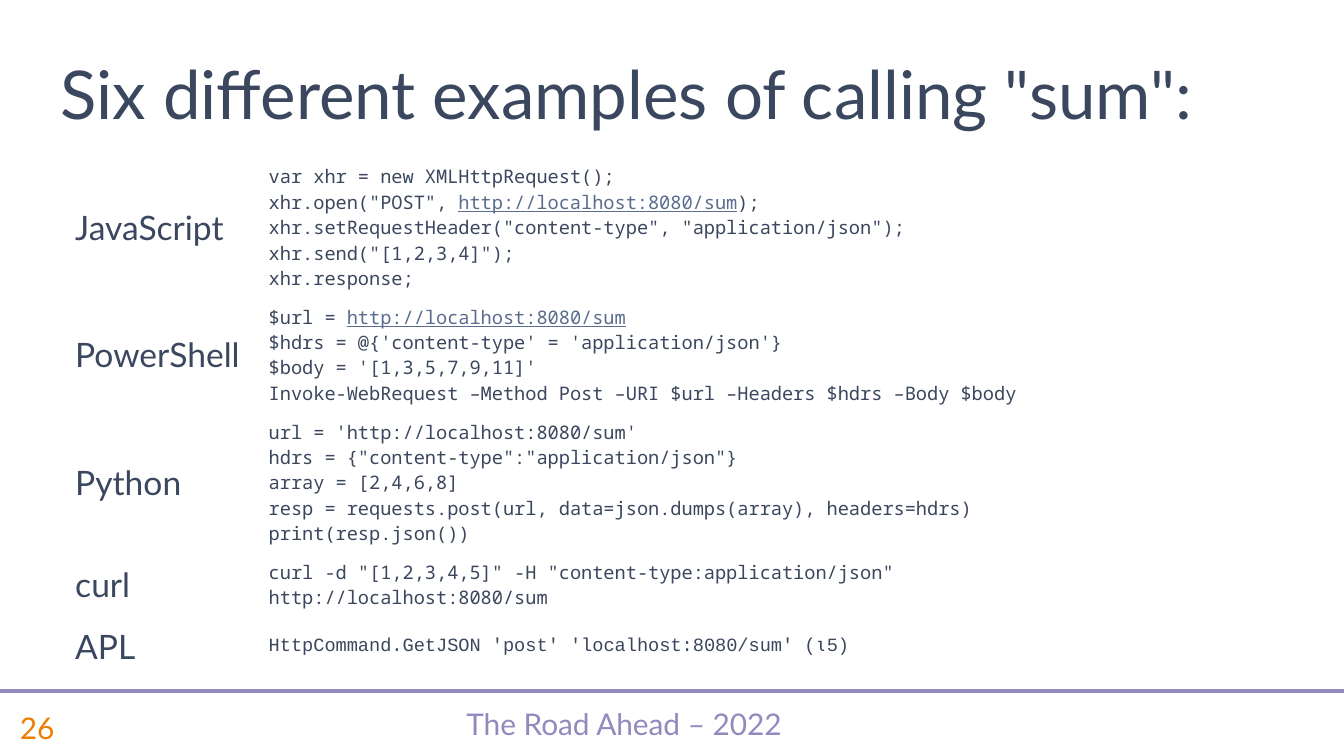
"""Build a slide that shows one web service called from several languages."""
from copy import deepcopy

from pptx import Presentation
from pptx.dml.color import RGBColor
from pptx.enum import shapes, text
from pptx.oxml import parse_xml
from pptx.oxml.ns import nsdecls, qn
from pptx.util import Inches, Pt

THEME = {
    "ink": "3B475E", "link": "5A6D8F", "accent": "928ABD", "number": "ED7F00",
    "sans": "Lato", "mono": "Noto Sans Mono", "apl": "Courier New",
    "title": 36, "label": 18, "code": 10, "footer": 16,
}
URL = "http://localhost:8080/sum"
EXAMPLES = [
    ("JavaScript", "mono", True, [
        "var xhr = new XMLHttpRequest();",
        f'xhr.open("POST", {URL});',
        'xhr.setRequestHeader("content-type", "application/json");',
        'xhr.send("[1,2,3,4]");',
        "xhr.response;",
    ]),
    ("PowerShell", "mono", True, [
        f"$url = {URL}",
        "$hdrs = @{'content-type' = 'application/json'}",
        "$body = '[1,3,5,7,9,11]'",
        "Invoke-WebRequest –Method Post –URI $url –Headers $hdrs –Body $body",
    ]),
    ("Python", "mono", False, [
        f"url = '{URL}'",
        'hdrs = {"content-type":"application/json"}',
        "array = [2,4,6,8]",
        "resp = requests.post(url, data=json.dumps(array), headers=hdrs)",
        "print(resp.json())",
    ]),
    ("curl", "mono", False, [
        f'curl -d "[1,2,3,4,5]" -H "content-type:application/json" {URL}',
    ]),
    ("APL", "apl", False, [
        "HttpCommand.GetJSON 'post' 'localhost:8080/sum' (⍳5)",
    ]),
]
CAPTIONS = [
    ("The Road Ahead – 2022", (0.78, 5.19, 7.73, 0.44), "footer", "accent",
     text.MSO_ANCHOR.MIDDLE, {"alignment": text.PP_ALIGN.CENTER, "line_spacing": 0.8}),
    ("26", (0.05, 5.19, 0.73, 0.44), "footer", "number", text.MSO_ANCHOR.MIDDLE, {}),
    ('Six different examples of calling "sum":', (0.35, 0.29, 9.06, 0.75),
     "title", "ink", text.MSO_ANCHOR.BOTTOM, {}),
]
WIDTH = Inches(10)
HEIGHT = WIDTH * 9 // 16
COLUMNS = (1.44, 6.57)
ROW_HEIGHT = 0.44
RULE_Y = 5.14


def apply(target, values):
    for name, value in values.items():
        setattr(target, name, value)


def color(name):
    return RGBColor.from_string(THEME[name])


def write(paragraph, words, size, face="sans", ink="ink", **extra):
    run = paragraph.add_run()
    run.text = words
    apply(run.font, {"size": Pt(THEME[size]), "name": THEME[face], **extra})
    run.font.color.rgb = color(ink)


def write_code(paragraph, lines, face, linked):
    for index, line in enumerate(lines):
        if index:
            paragraph.add_line_break()
        before, address, after = line.partition(URL) if linked else (line, "", "")
        for words, style in ((before, {}), (address, {"ink": "link", "underline": True}), (after, {})):
            if words:
                write(paragraph, words, "code", face, **style)
    properties = paragraph.runs[0].font._element
    for line_break in paragraph._p.findall(qn("a:br")):
        line_break.append(deepcopy(properties))


def add_caption(slide, words, place, size, ink, anchor, layout):
    frame = slide.shapes.add_textbox(*map(Inches, place)).text_frame
    apply(frame, {"word_wrap": True, "vertical_anchor": anchor})
    apply(frame.paragraphs[0], layout)
    write(frame.paragraphs[0], words, size, ink=ink)


def add_rule(slide):
    rule = slide.shapes.add_connector(
        shapes.MSO_CONNECTOR.STRAIGHT, 0, Inches(RULE_Y), WIDTH, Inches(RULE_Y))
    rule.line.color.rgb = color("accent")
    rule.line.width = Pt(2.25)
    rule._element.spPr.append(parse_xml(f"<a:effectLst {nsdecls('a')}/>"))


def add_examples(slide):
    examples = slide.shapes.add_table(
        len(EXAMPLES), len(COLUMNS), Inches(0.46), Inches(1.17),
        Inches(sum(COLUMNS)), Inches(ROW_HEIGHT * len(EXAMPLES))).table
    apply(examples, {"first_row": False, "horz_banding": False})
    for column, width in zip(examples.columns, COLUMNS):
        column.width = Inches(width)
    for row, (language, face, linked, lines) in zip(examples.rows, EXAMPLES):
        for cell in row.cells:
            cell.fill.background()
            cell.vertical_anchor = text.MSO_ANCHOR.MIDDLE
        label, code = (cell.text_frame.paragraphs[0] for cell in row.cells)
        write(label, language, "label")
        write_code(code, lines, face, linked)


def main():
    deck = Presentation()
    apply(deck, {"slide_width": WIDTH, "slide_height": HEIGHT})
    slide = deck.slides.add_slide(deck.slide_layouts[6])
    add_rule(slide)
    add_examples(slide)
    for caption in CAPTIONS:
        add_caption(slide, *caption)
    deck.save("out.pptx")


if __name__ == "__main__":
    main()
